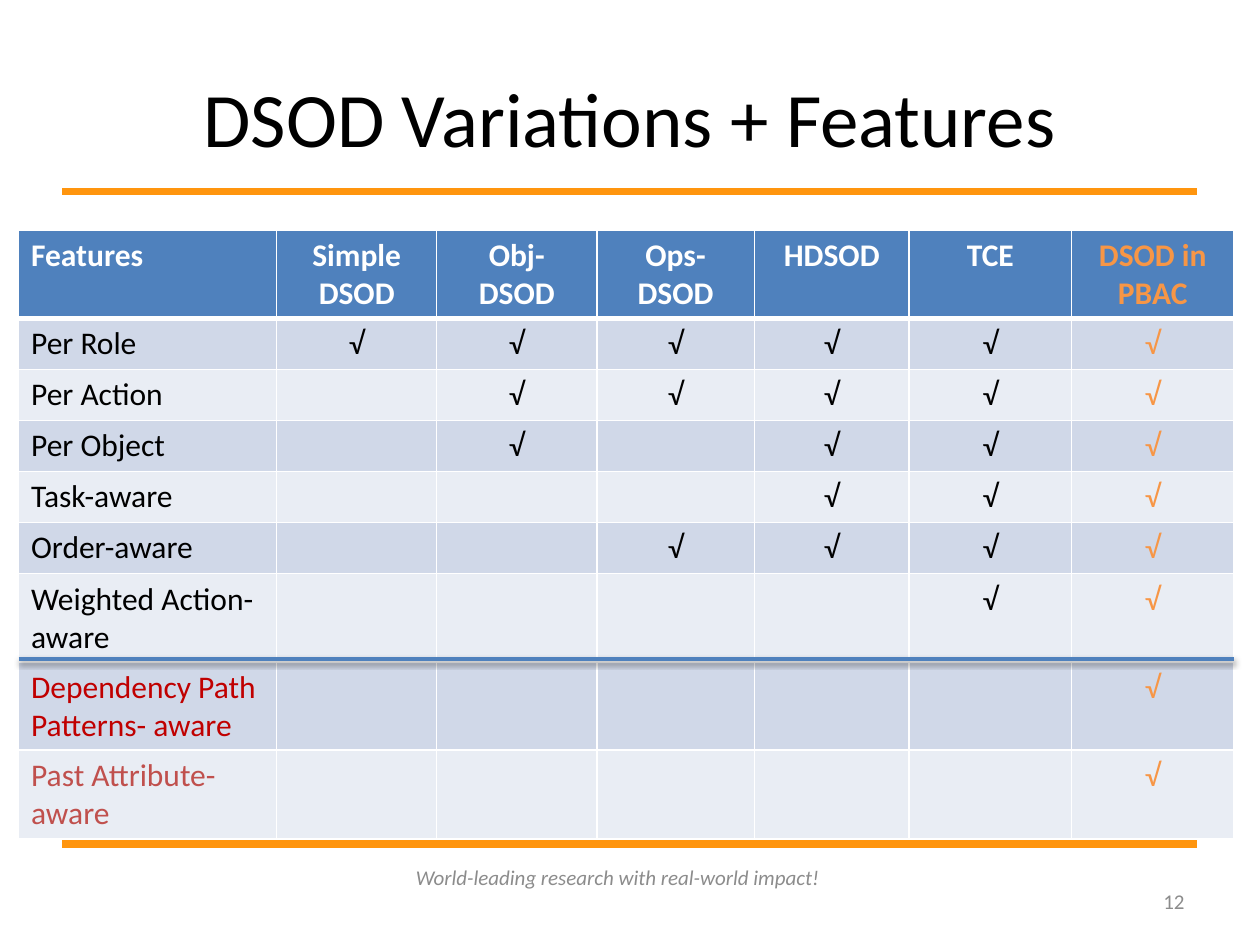
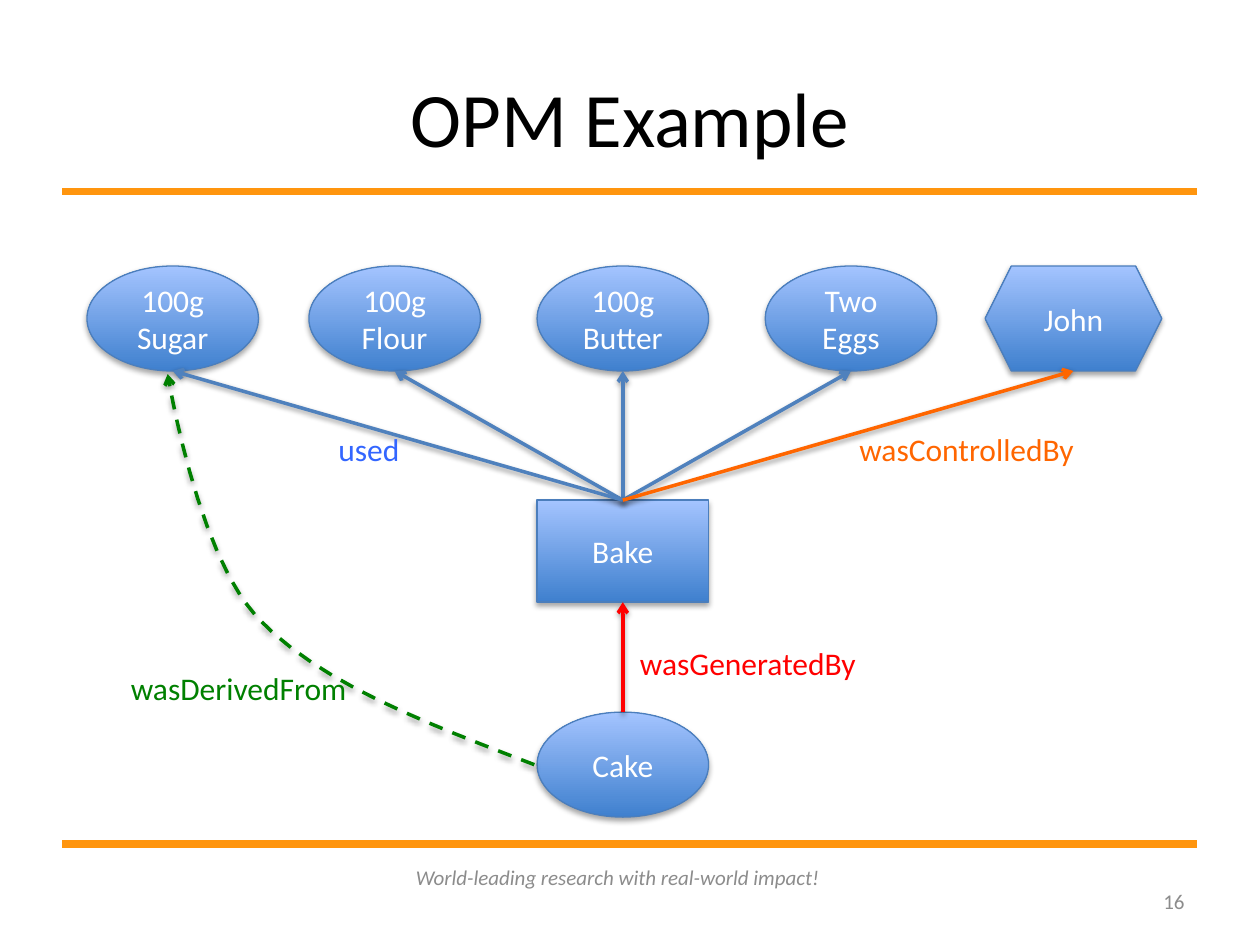
from dataclasses import dataclass
from typing import NamedTuple

from lxml import etree
from pptx import Presentation
from pptx.dml.color import RGBColor
from pptx.enum.dml import MSO_LINE
from pptx.enum.shapes import MSO_CONNECTOR, MSO_SHAPE
from pptx.enum.text import MSO_ANCHOR, PP_ALIGN
from pptx.oxml.ns import qn
from pptx.util import Pt

LEFT, MID, RIGHT = PP_ALIGN.LEFT, PP_ALIGN.CENTER, PP_ALIGN.RIGHT
TOP, CENTER = MSO_ANCHOR.TOP, MSO_ANCHOR.MIDDLE
OVAL, HEX, RECT = MSO_SHAPE.OVAL, MSO_SHAPE.HEXAGON, MSO_SHAPE.RECTANGLE
STRAIGHT, DASH = MSO_CONNECTOR.STRAIGHT, MSO_LINE.DASH


@dataclass(frozen=True)
class Theme:
    font: str = "Calibri"
    title: float = 44
    body: float = 18
    small: float = 12
    black: str = "000000"
    white: str = "FFFFFF"
    gray: str = "8C8C8C"
    band: str = "FF950E"
    blue: str = "4F81BD"
    edge: str = "4B7EBC"
    deep: str = "3F80CE"
    pale: str = "A4C4FF"
    rows: tuple = ("D0D8E8", "E9EDF4")
    gold: str = "F79646"
    dark: str = "C00000"
    brick: str = "C0504D"
    red: str = "FF0000"
    green: str = "008000"
    orange: str = "FF6600"
    azure: str = "3366FF"


T = Theme()


class Box(NamedTuple):
    x: float
    y: float
    w: float
    h: float


class Style(NamedTuple):
    size: float = T.body
    color: str = T.black
    align: int = LEFT
    bold: bool = False
    italic: bool = False


class Shade(NamedTuple):
    alpha: int
    dist: float


class Node(NamedTuple):
    text: str
    kind: int
    box: Box

    @property
    def top(self) -> tuple:
        return self.box.x + self.box.w / 2, self.box.y

    @property
    def foot(self) -> tuple:
        return self.box.x + self.box.w / 2, self.box.y + self.box.h


class Label(NamedTuple):
    text: str
    box: Box
    color: str


class Row(NamedTuple):
    name: str
    marks: str
    color: str = T.black


SOLID = Shade(35, 1.8)
THIN = Shade(38, 1.6)


def rgb(code: str) -> RGBColor:
    return RGBColor.from_string(code)


def place(box: Box) -> list:
    return [Pt(v) for v in box]


def write(frame, text: str, style: Style) -> None:
    frame.word_wrap = True
    for i, line in enumerate(text.split("\n")):
        para = frame.add_paragraph() if i else frame.paragraphs[0]
        para.alignment = style.align
        run = para.add_run()
        run.text = line
        font = run.font
        font.name, font.size = T.font, Pt(style.size)
        font.bold, font.italic = style.bold, style.italic
        font.color.rgb = rgb(style.color)


def add_text(slide, text: str, box: Box, style: Style, anchor=CENTER) -> None:
    frame = slide.shapes.add_textbox(*place(box)).text_frame
    frame.vertical_anchor = anchor
    write(frame, text, style)


def add_shade(item, shade: Shade | None) -> None:
    part = etree.SubElement(item._element.spPr, qn("a:effectLst"))
    if shade:
        cast = etree.SubElement(part, qn("a:outerShdw"), blurRad=str(Pt(3.15)),
                                dist=str(Pt(shade.dist)), dir="5400000", rotWithShape="0")
        tint = etree.SubElement(cast, qn("a:srgbClr"), val=T.black)
        etree.SubElement(tint, qn("a:alpha"), val=str(shade.alpha * 1000))


def set_line(item, color: str, width: float) -> None:
    item.line.color.rgb = rgb(color)
    item.line.width = Pt(width)


def add_head(item) -> None:
    line = item._element.spPr.find(qn("a:ln"))
    etree.SubElement(line, qn("a:tailEnd"), type="arrow")


def add_line(slide, start: tuple, end: tuple, color: str, width: float = 2,
             shade: Shade | None = THIN, head: bool = False):
    line = slide.shapes.add_connector(STRAIGHT, *[Pt(v) for v in start + end])
    set_line(line, color, width)
    if head:
        add_head(line)
    add_shade(line, shade)
    return line


def add_base(deck, title: str, page: int):
    slide = deck.slides.add_slide(deck.slide_layouts[6])
    for y in (109.5, 482.4):
        add_line(slide, (35.5, y), (684, y), T.band, 4.31, None)
    add_text(slide, title, Box(36, 21.6, 648, 90), Style(T.title, align=MID))
    add_text(slide, "World-leading research with real-world impact!",
             Box(222.5, 487, 261, 28.8), Style(T.small, T.gray, MID, italic=True))
    add_text(slide, str(page), Box(516, 500.4, 168, 28.8), Style(T.small, T.gray, RIGHT))
    return slide


def set_cell(cell, text: str, fill: str, style: Style, above: float, below: float) -> None:
    props = cell._tc.get_or_add_tcPr()
    for side, width in (("L", 1), ("R", 1), ("T", above), ("B", below)):
        line = etree.SubElement(props, qn(f"a:ln{side}"), w=str(Pt(width)))
        paint = etree.SubElement(line, qn("a:solidFill"))
        etree.SubElement(paint, qn("a:srgbClr"), val=T.white)
    cell.fill.solid()
    cell.fill.fore_color.rgb = rgb(fill)
    cell.vertical_anchor = TOP
    if text:
        write(cell.text_frame, text, style)


HEADS = ("Features", "Simple DSOD", "Obj-\nDSOD", "Ops-\nDSOD", "HDSOD", "TCE", "DSOD in PBAC")
WIDTHS = (147.5, 91.5, 91.5, 90, 88.5, 92.8, 92.8)
ROWS = (
    Row("Per Role", "√√√√√√"),
    Row("Per Action", "-√√√√√"),
    Row("Per Object", "-√-√√√"),
    Row("Task-aware", "---√√√"),
    Row("Order-aware", "--√√√√"),
    Row("Weighted Action-aware", "----√√"),
    Row("Dependency Path Patterns- aware", "-----√", T.dark),
    Row("Past Attribute-aware", "-----√", T.brick),
)


def draw_grid(deck) -> None:
    slide = add_base(deck, "DSOD Variations + Features", 12)
    high, last = 29.2, len(HEADS) - 1
    box = Box(10.6, 131.4, sum(WIDTHS), high * (len(ROWS) + 1))
    table = slide.shapes.add_table(len(ROWS) + 1, len(HEADS), *place(box)).table
    for col, width in zip(table.columns, WIDTHS):
        col.width = Pt(width)
    for row in table.rows:
        row.height = Pt(high)
    for c, text in enumerate(HEADS):
        color = T.gold if c == last else T.white
        style = Style(color=color, align=MID if c else LEFT, bold=True)
        set_cell(table.cell(0, c), text, T.blue, style, 1, 3)
    for r, row in enumerate(ROWS, 1):
        fill, above = T.rows[(r - 1) % 2], 3 if r == 1 else 1
        set_cell(table.cell(r, 0), row.name, fill, Style(color=row.color), above, 1)
        for c, mark in enumerate(row.marks, 1):
            style = Style(color=T.gold if c == last else T.black, align=MID)
            set_cell(table.cell(r, c), mark.strip("-"), fill, style, above, 1)
    add_line(slide, (10.6, 376.6), (705, 376.6), T.blue)


def oval(text: str, x: float, y: float = 152) -> Node:
    return Node(text, OVAL, Box(x, y, 98, 60))


CAKE = oval("Cake", 306.9, 406.9)
BAKE = Node("Bake", RECT, Box(306.9, 285.8, 98, 58.3))
JOHN = Node("John", HEX, Box(562.9, 152, 101, 60))
FOODS = (oval("Two\nEggs", 437.3), oval("100g\nButter", 306.9),
         oval("100g\nFlour", 176.5), oval("100g Sugar", 49.7))
LABELS = (
    Label("wasDerivedFrom", Box(67.7, 378.7, 158, 29), T.green),
    Label("wasGeneratedBy", Box(358.6, 364.3, 158, 29), T.red),
    Label("wasControlledBy", Box(484, 242.4, 158, 29), T.orange),
    Label("used", Box(186.3, 242.4, 79, 29), T.azure),
)
BENDS = (
    ((305.3, 437), (243.4, 413.3), (182.2, 390.2), (146.9, 352.8)),
    ((146.9, 352.8), (112.3, 316.1), (95.8, 213.8), (95.8, 213.8)),
)


def add_node(slide, node: Node):
    shape = slide.shapes.add_shape(node.kind, *place(node.box))
    shape.fill.gradient()
    shape.fill.gradient_angle = 90
    for stop, color in zip(shape.fill.gradient_stops, (T.deep, T.pale)):
        stop.color.rgb = rgb(color)
    set_line(shape, T.edge, 0.75)
    add_shade(shape, SOLID)
    shape.text_frame.vertical_anchor = CENTER
    write(shape.text_frame, node.text, Style(color=T.white, align=MID))
    return shape


def bend(knots: tuple, t: float) -> tuple:
    rates = ((1 - t) ** 3, 3 * t * (1 - t) ** 2, 3 * t * t * (1 - t), t ** 3)
    return tuple(Pt(sum(k * v for k, v in zip(rates, axis))) for axis in zip(*knots))


def add_curve(slide, steps: int = 12) -> None:
    dots = [bend(knots, i / steps) for knots in BENDS for i in range(1, steps + 1)]
    path = slide.shapes.build_freeform(*bend(BENDS[0], 0))
    path.add_line_segments(dots, close=False)
    curve = path.convert_to_shape()
    curve.fill.background()
    set_line(curve, T.green, 2)
    curve.line.dash_style = DASH
    add_head(curve)
    add_shade(curve, THIN)


def draw_graph(deck) -> None:
    slide = add_base(deck, "OPM Example", 16)
    for node in (CAKE, *FOODS, JOHN):
        add_node(slide, node)
    bake = add_node(slide, BAKE)
    made = add_line(slide, CAKE.top, BAKE.foot, T.red, head=True)
    made.end_connect(bake, 2)
    for node in (*FOODS, JOHN):
        color = T.orange if node is JOHN else T.blue
        link = add_line(slide, BAKE.top, node.foot, color, head=True)
        link.begin_connect(bake, 0)
    add_curve(slide)
    for label in LABELS:
        add_text(slide, label.text, label.box, Style(color=label.color), TOP)


def main() -> None:
    deck = Presentation()
    deck.slide_width, deck.slide_height = Pt(720), Pt(540)
    draw_grid(deck)
    draw_graph(deck)
    deck.save("out.pptx")


if __name__ == "__main__":
    main()
